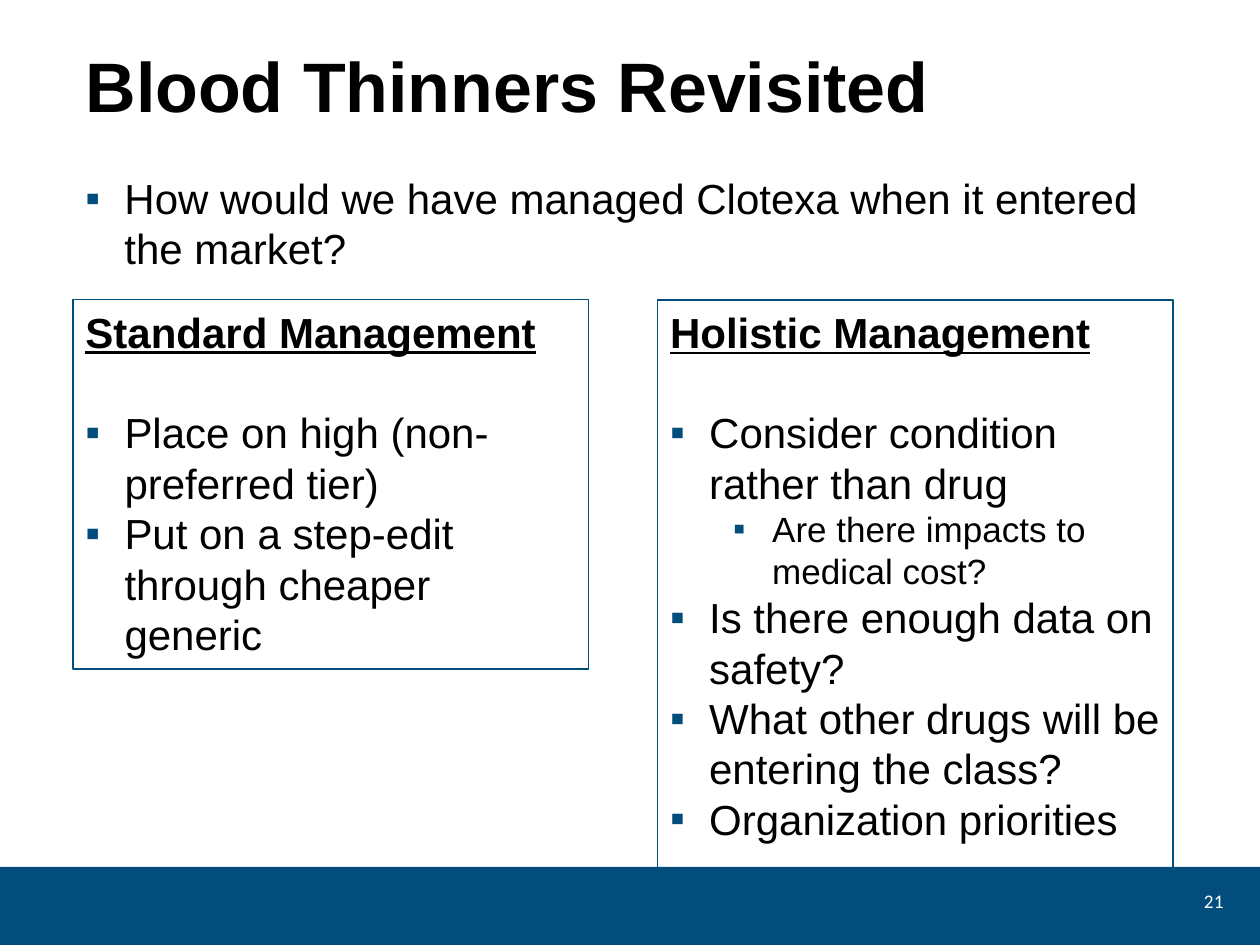
"""Build the slide that compares two ways to manage a new drug."""
from lxml.etree import SubElement
from pptx import Presentation
from pptx.dml.color import RGBColor
from pptx.enum.shapes import MSO_SHAPE
from pptx.enum.text import MSO_ANCHOR, PP_ALIGN
from pptx.oxml.ns import qn
from pptx.util import Inches, Pt

BLUE, BLACK, WHITE = "024D7C", "000000", "FFFFFF"
LEFT, WIDE = 0.58, 8.73
TITLE = "Blood Thinners Revisited"
ASK = "How would we have managed Clotexa when it entered the market?"
NUMBER = "21"
CARDS = [
    ("Standard Management", 2.93, [
        (0, "Place on high (non-preferred tier)"),
        (0, "Put on a step-edit through cheaper generic"),
    ]),
    ("Holistic Management", 4.81, [
        (0, "Consider condition rather than drug"),
        (1, "Are there impacts to medical cost?"),
        (0, "Is there enough data on safety?"),
        (0, "What other drugs will be entering the class?"),
        (0, "Organization priorities"),
    ]),
]
BODY = {"name": "Arial", "size": Pt(24), "bold": False}
SUB = BODY | {"size": Pt(20)}
HEAD = BODY | {"bold": True, "underline": True}
TOP = BODY | {"size": Pt(40), "bold": True}
SMALL = {"name": "Calibri", "size": Pt(11)}


def tint(code):
    return RGBColor.from_string(code)


def box(slide, *at, fill=None, line=None):
    shape = slide.shapes.add_shape(MSO_SHAPE.RECTANGLE, *map(Inches, at))
    shape.shadow.inherit = False
    if fill:
        shape.fill.solid()
        shape.fill.fore_color.rgb = tint(fill)
    else:
        shape.fill.background()
    if line:
        shape.line.color.rgb = tint(line)
        shape.line.width = Pt(0.75)
    else:
        shape.line.fill.background()
    frame = shape.text_frame
    frame.word_wrap = True
    frame.vertical_anchor = MSO_ANCHOR.TOP
    return frame


def write(para, text, style, color=BLACK, align=PP_ALIGN.LEFT):
    para.alignment = align
    run = para.add_run()
    run.text = text
    for key, value in style.items():
        setattr(run.font, key, value)
    run.font.color.rgb = tint(color)


def bullet(para, text, level=0):
    para.level = level
    props = para._p.get_or_add_pPr()
    props.set("marL", str(Inches(0.31 + 0.5 * level)))
    props.set("indent", str(Inches(-0.31)))
    shade = SubElement(props, qn("a:buClr"))
    SubElement(shade, qn("a:srgbClr"), val=BLUE)
    SubElement(props, qn("a:buFont"), typeface="Arial")
    SubElement(props, qn("a:buChar"), char="▪")
    write(para, text, SUB if level else BODY)


def main():
    deck = Presentation()
    deck.slide_width, deck.slide_height = Inches(10), Inches(7.5)
    slide = deck.slides.add_slide(deck.slide_layouts[5])
    box(slide, 0, 6.88, 10, 0.65, fill=BLUE)

    title = slide.shapes.title
    title.left, title.top = Inches(LEFT), Inches(0.36)
    title.width, title.height = Inches(WIDE), Inches(0.81)
    title.text_frame.vertical_anchor = MSO_ANCHOR.TOP
    para = title.text_frame.paragraphs[0]
    para.line_spacing = 0.9
    write(para, TITLE, TOP)

    page = box(slide, 9.28, 7.04, 0.53, 0.22)
    page.vertical_anchor = MSO_ANCHOR.MIDDLE
    write(page.paragraphs[0], NUMBER, SMALL, WHITE, PP_ALIGN.RIGHT)

    bullet(box(slide, LEFT, 1.32, WIDE, 0.91).paragraphs[0], ASK)

    width = 4.09
    step = WIDE - width
    for col, (head, high, items) in enumerate(CARDS):
        frame = box(slide, LEFT + col * step, 2.38, width, high, line=BLUE)
        write(frame.paragraphs[0], head, HEAD)
        for row, (level, text) in enumerate(items):
            para = frame.add_paragraph()
            if row == 0:
                para.space_before = Pt(28.8)
            bullet(para, text, level)

    deck.save("out.pptx")


if __name__ == "__main__":
    main()
